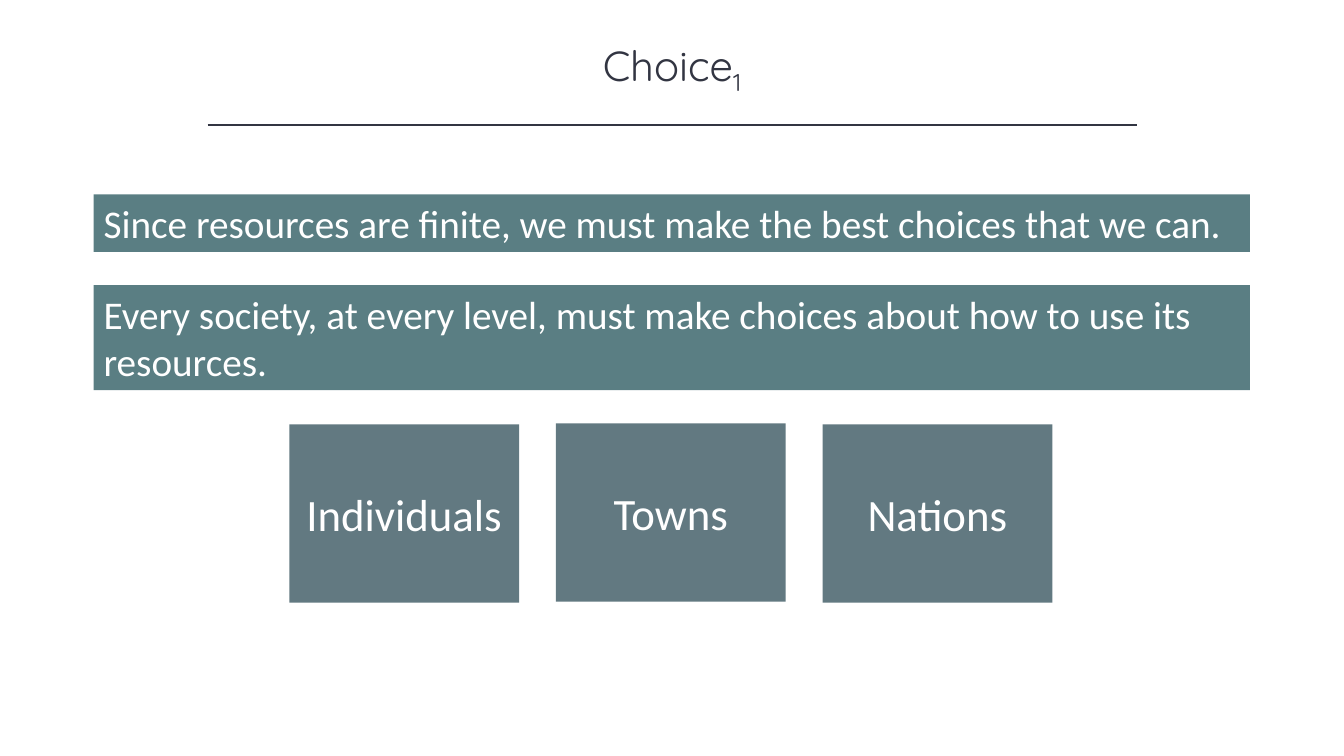
from lxml.etree import SubElement as Sub
from pptx import Presentation
from pptx.dml.color import RGBColor as Rgb
from pptx.enum.shapes import MSO_CONNECTOR as Link, MSO_SHAPE as Shape
from pptx.enum.text import MSO_ANCHOR as Anchor, PP_ALIGN as Align
from pptx.oxml.ns import qn
from pptx.util import Pt

HUES = {"ink": "323542", "teal": "5A7E83", "slate": "627981", "white": "FFFFFF"}


class Deck:
    def __init__(self):
        self.file = Presentation()
        self.file.slide_width, self.file.slide_height = Pt(960), Pt(540)
        self.slide = self.file.slides.add_slide(self.file.slide_layouts[5])

    def hue(self, name):
        return Rgb.from_string(HUES[name])

    def run(self, para, text, size, face, hue):
        run = para.add_run()
        run.text = text
        run.font.size, run.font.name = Pt(size), face
        run.font.color.rgb = self.hue(hue)
        return run

    def title(self, text, sub, x, y, w, h):
        box = self.slide.shapes.title
        box.left, box.top, box.width, box.height = map(Pt, (x, y, w, h))
        box.text_frame.vertical_anchor = Anchor.MIDDLE
        para = box.text_frame.paragraphs[0]
        para.alignment = Align.CENTER
        self.run(para, text, 30, "Quicksand", "ink")
        low = self.run(para, sub, 30, "Quicksand", "ink")
        low.font._element.set("baseline", "-25000")

    def rule(self, x, y, end):
        line = self.slide.shapes.add_connector(
            Link.STRAIGHT, Pt(x), Pt(y), Pt(end), Pt(y))
        line.line.color.rgb = self.hue("ink")
        line.line.width = Pt(1)
        Sub(line._element.spPr, qn("a:effectLst"))

    def block(self, text, x, y, w, h, fill, size, align, anchor):
        box = self.slide.shapes.add_shape(Shape.RECTANGLE, *map(Pt, (x, y, w, h)))
        box.shadow.inherit = False
        box.fill.solid()
        box.fill.fore_color.rgb = self.hue(fill)
        box.line.fill.background()
        frame = box.text_frame
        frame.word_wrap = True
        frame.vertical_anchor = anchor
        para = frame.paragraphs[0]
        para.alignment = align
        self.run(para, text, size, "Calibri", "white")

    def banner(self, text, y, h):
        self.block(text, 66.96, y, 825.84, h, "teal", 28, Align.LEFT, Anchor.TOP)

    def card(self, text, x, y):
        self.block(text, x, y, 164.16, 127.44, "slate", 32,
                   Align.CENTER, Anchor.MIDDLE)


def main():
    deck = Deck()
    deck.title("Choice", "1", 120, 26.64, 720, 43.92)
    deck.rule(148.32, 89.28, 812.16)
    deck.banner("Since resources are finite, we must make the best "
                "choices that we can.", 138.96, 41.04)
    deck.banner("Every society, at every level, must make choices about "
                "how to use its resources.", 203.76, 74.88)
    cards = (("Individuals", 303.12), ("Towns", 302.4), ("Nations", 303.12))
    for i, (name, top) in enumerate(cards):
        deck.card(name, 206.64 + 190.44 * i, top)
    deck.file.save("out.pptx")


if __name__ == "__main__":
    main()
